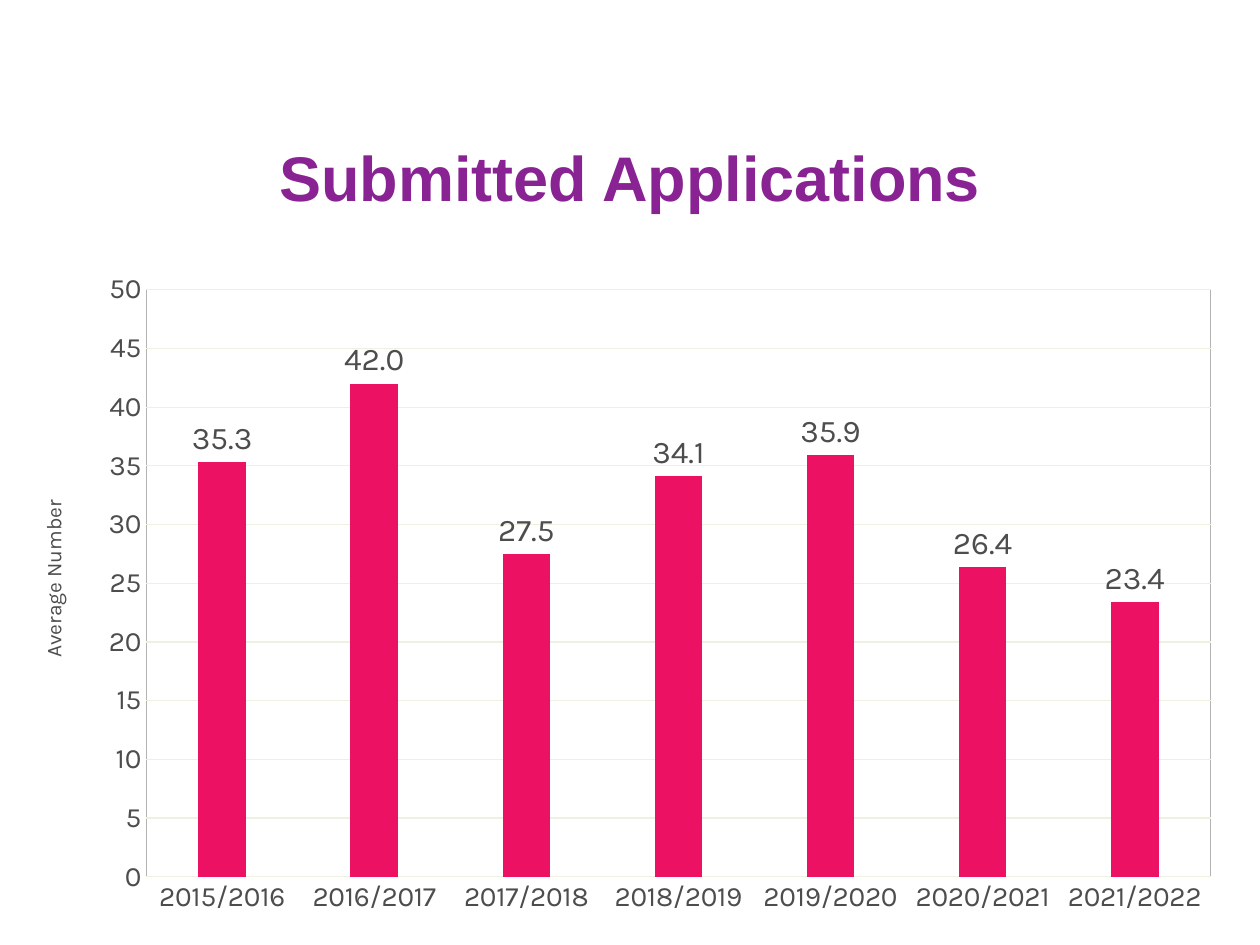
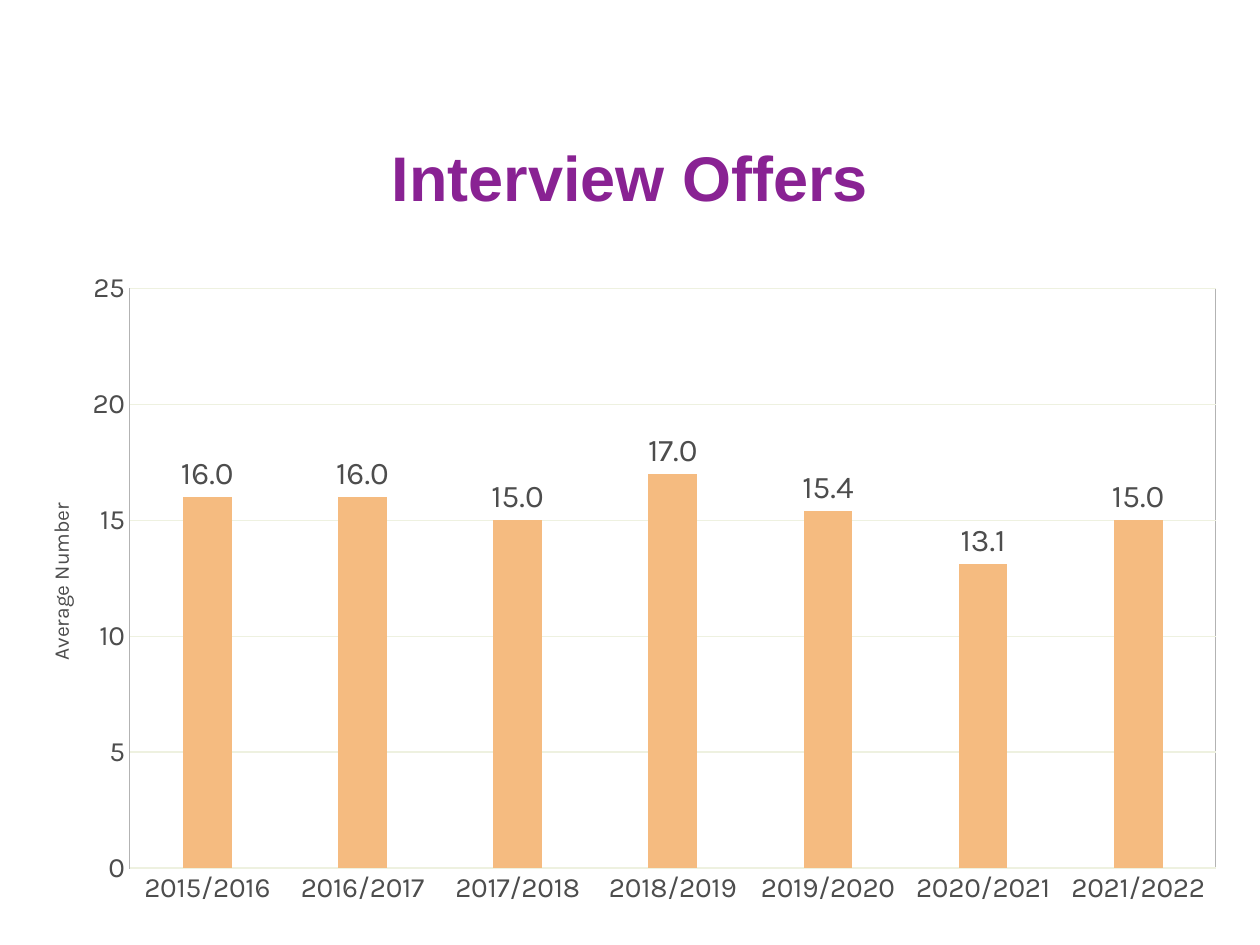
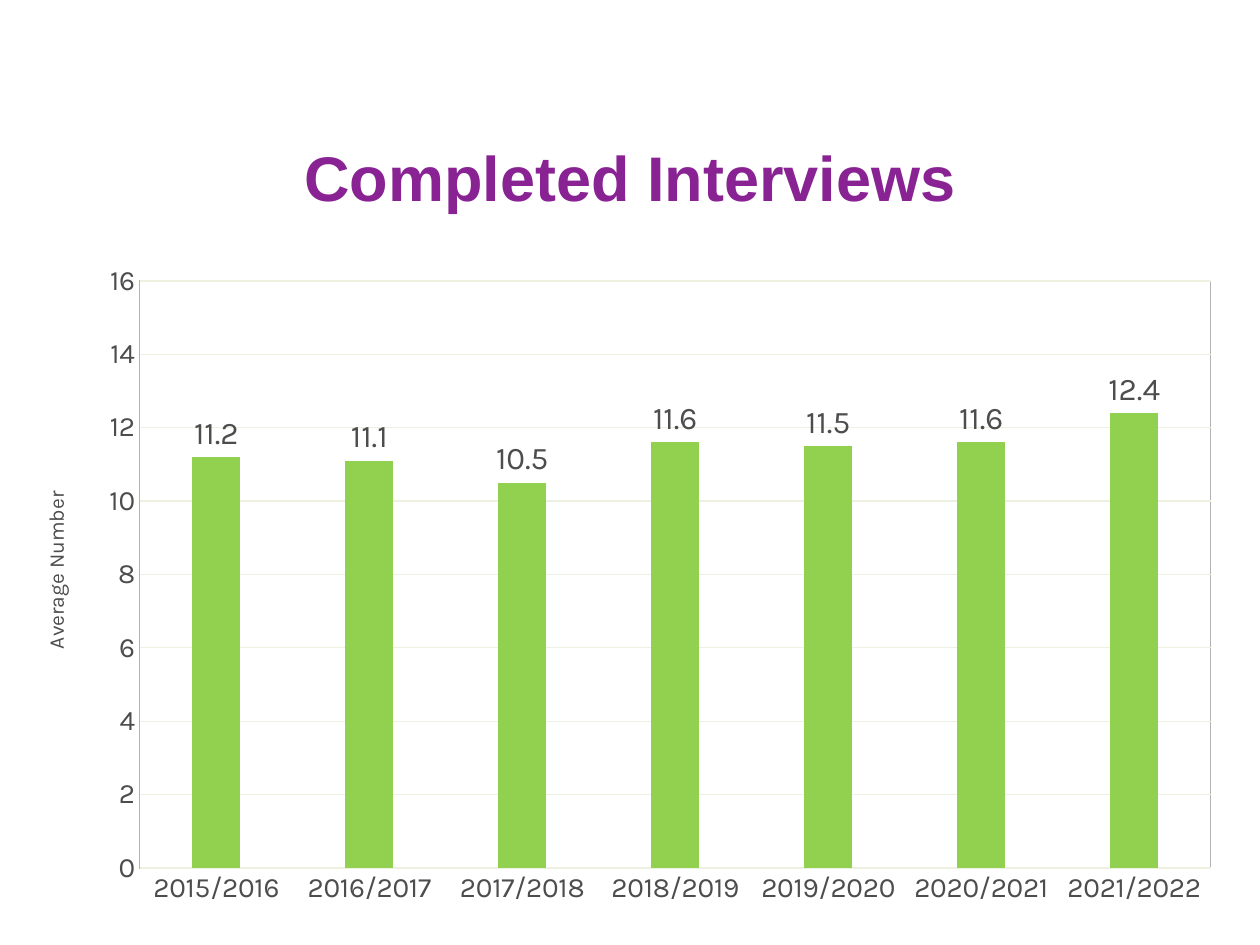
from pptx import Presentation
from pptx.chart.data import CategoryChartData
from pptx.dml.color import RGBColor
from pptx.enum.chart import XL_CHART_TYPE as ChartType
from pptx.enum.chart import XL_LABEL_POSITION as LabelPosition
from pptx.enum.chart import XL_TICK_MARK as TickMark
from pptx.enum.text import MSO_ANCHOR, MSO_AUTO_SIZE, PP_ALIGN
from pptx.oxml import parse_xml
from pptx.oxml.ns import nsdecls
from pptx.util import Inches, Pt

PURPLE = RGBColor(0x89, 0x22, 0x93)
GRAY = RGBColor(0x4D, 0x4D, 0x4D)
GRID = RGBColor(0xEE, 0xF1, 0xE0)
PINK = RGBColor(0xED, 0x11, 0x63)
PEACH = RGBColor(0xF5, 0xBB, 0x80)
GREEN = RGBColor(0x92, 0xD0, 0x50)
BORDER = "B3B3B3"

YEARS = [f"{year}/{year + 1}" for year in range(2015, 2022)]
AXIS_TITLE = "Average Number"

# Plot boxes (left, top, width, height) and axis title places are inches inside the chart.
SLIDES = [
    {"title": "Submitted Applications", "color": PINK, "top": 2.07,
     "averages": [35.3, 42, 27.5, 34.1, 35.9, 26.4, 23.4],
     "scale": {"minimum_scale": 0, "maximum_scale": 50, "major_unit": 5},
     "plot": (0.96, 0.23, 8.45, 4.66), "axis_title": (0.08, 1.87)},
    {"title": "Interview Offers", "color": PEACH, "top": 2.09,
     "averages": [16, 16, 15, 17, 15.4, 13.1, 15],
     "scale": {"minimum_scale": 0, "maximum_scale": 25, "major_unit": 5},
     "plot": (0.83, 0.2, 8.62, 4.6), "axis_title": (0.14, 1.87)},
    {"title": "Completed Interviews", "color": GREEN, "top": 2,
     "averages": [11.2, 11.1, 10.5, 11.6, 11.5, 11.6, 12.4],
     "scale": {"minimum_scale": 0, "maximum_scale": 16, "major_unit": 2},
     "plot": (0.91, 0.23, 8.5, 4.66), "axis_title": (0.1, 1.87)},
]

CHART_LEFT, CHART_WIDTH, CHART_HEIGHT = 0.2, 9.6, 5.29
TITLE_BOX = {"left": Inches(0.69), "top": Inches(1.1),
             "width": Inches(8.62), "height": Inches(0.75)}
TITLE_FRAME = {"word_wrap": True, "auto_size": MSO_AUTO_SIZE.NONE,
               "vertical_anchor": MSO_ANCHOR.MIDDLE,
               "margin_top": Inches(0.05), "margin_bottom": Inches(0.13)}
TITLE_FONT = {"name": "Arial", "size": Pt(36), "bold": True}


def set_all(target, values):
    for name, value in values.items():
        setattr(target, name, value)


def style_font(font, size):
    set_all(font, {"name": "Karla", "size": Pt(size), "bold": False})
    font.color.rgb = GRAY


def style_line(line):
    line.width = Pt(0.75)
    line.color.rgb = GRID


def manual_layout(box, target=""):
    """Return a chart layout element for a box given in inches."""
    sizes = (CHART_WIDTH, CHART_HEIGHT) * 2
    places = "".join(f'<c:{tag} val="{length / size:.4f}"/>'
                     for tag, length, size in zip("xywh", box, sizes))
    return parse_xml(
        f'<c:layout {nsdecls("c")}><c:manualLayout>{target}'
        f'<c:xMode val="edge"/><c:yMode val="edge"/>{places}'
        '</c:manualLayout></c:layout>')


def replace_layout(parent, layout, index):
    for old in parent.findall(layout.tag):
        parent.remove(old)
    parent.insert(index, layout)


def add_title(slide, text):
    title = slide.shapes.title
    set_all(title, TITLE_BOX)
    set_all(title.text_frame, TITLE_FRAME)
    title.text_frame.text = text
    paragraph = title.text_frame.paragraphs[0]
    set_all(paragraph, {"alignment": PP_ALIGN.CENTER, "line_spacing": 0.9})
    set_all(paragraph.font, TITLE_FONT)
    paragraph.font.color.rgb = PURPLE


def style_axes(chart, content):
    years, averages = chart.category_axis, chart.value_axis
    for axis in (years, averages):
        set_all(axis, {"major_tick_mark": TickMark.NONE, "minor_tick_mark": TickMark.NONE})
        style_font(axis.tick_labels.font, 16)
    style_line(years.format.line)
    averages.format.line.fill.background()
    set_all(averages, content["scale"])
    averages.has_major_gridlines = True
    style_line(averages.major_gridlines.format.line)
    set_all(averages.tick_labels, {"number_format": "0", "number_format_is_linked": False})

    frame = averages.axis_title.text_frame
    frame.text = AXIS_TITLE
    style_font(frame.paragraphs[0].runs[0].font, 12)
    body = frame._txBody.bodyPr
    body.set("rot", "-5400000")
    body.set("vert", "horz")
    replace_layout(averages.axis_title._element, manual_layout(content["axis_title"]), 1)


def style_plot(chart, content):
    plot = chart.plots[0]
    set_all(plot, {"gap_width": 219, "overlap": -27,
                   "vary_by_categories": False, "has_data_labels": True})
    set_all(plot.data_labels, {"show_value": True, "position": LabelPosition.OUTSIDE_END,
                               "number_format": "###0.0", "number_format_is_linked": False})
    style_font(plot.data_labels.font, 18)
    fill = plot.series[0].format.fill
    fill.solid()
    fill.fore_color.rgb = content["color"]

    area = chart._chartSpace.chart.plotArea
    replace_layout(area, manual_layout(content["plot"], '<c:layoutTarget val="inner"/>'), 0)
    area.append(parse_xml(
        f'<c:spPr {nsdecls("c", "a")}><a:noFill/><a:ln w="0"><a:solidFill>'
        f'<a:srgbClr val="{BORDER}"/></a:solidFill></a:ln></c:spPr>'))


def add_column_chart(slide, content):
    chart_data = CategoryChartData(number_format="###0.0")
    chart_data.categories = YEARS
    chart_data.add_series("Series 1", content["averages"])
    box = (CHART_LEFT, content["top"], CHART_WIDTH, CHART_HEIGHT)
    chart = slide.shapes.add_chart(
        ChartType.COLUMN_CLUSTERED, *map(Inches, box), chart_data).chart
    set_all(chart, {"has_legend": False, "has_title": False})
    style_font(chart.font, 18)
    style_axes(chart, content)
    style_plot(chart, content)


def main():
    deck = Presentation()
    set_all(deck, {"slide_width": Inches(10), "slide_height": Inches(7.5)})
    title_only = deck.slide_layouts[5]
    for content in SLIDES:
        slide = deck.slides.add_slide(title_only)
        add_title(slide, content["title"])
        add_column_chart(slide, content)
    deck.save("out.pptx")


if __name__ == "__main__":
    main()
